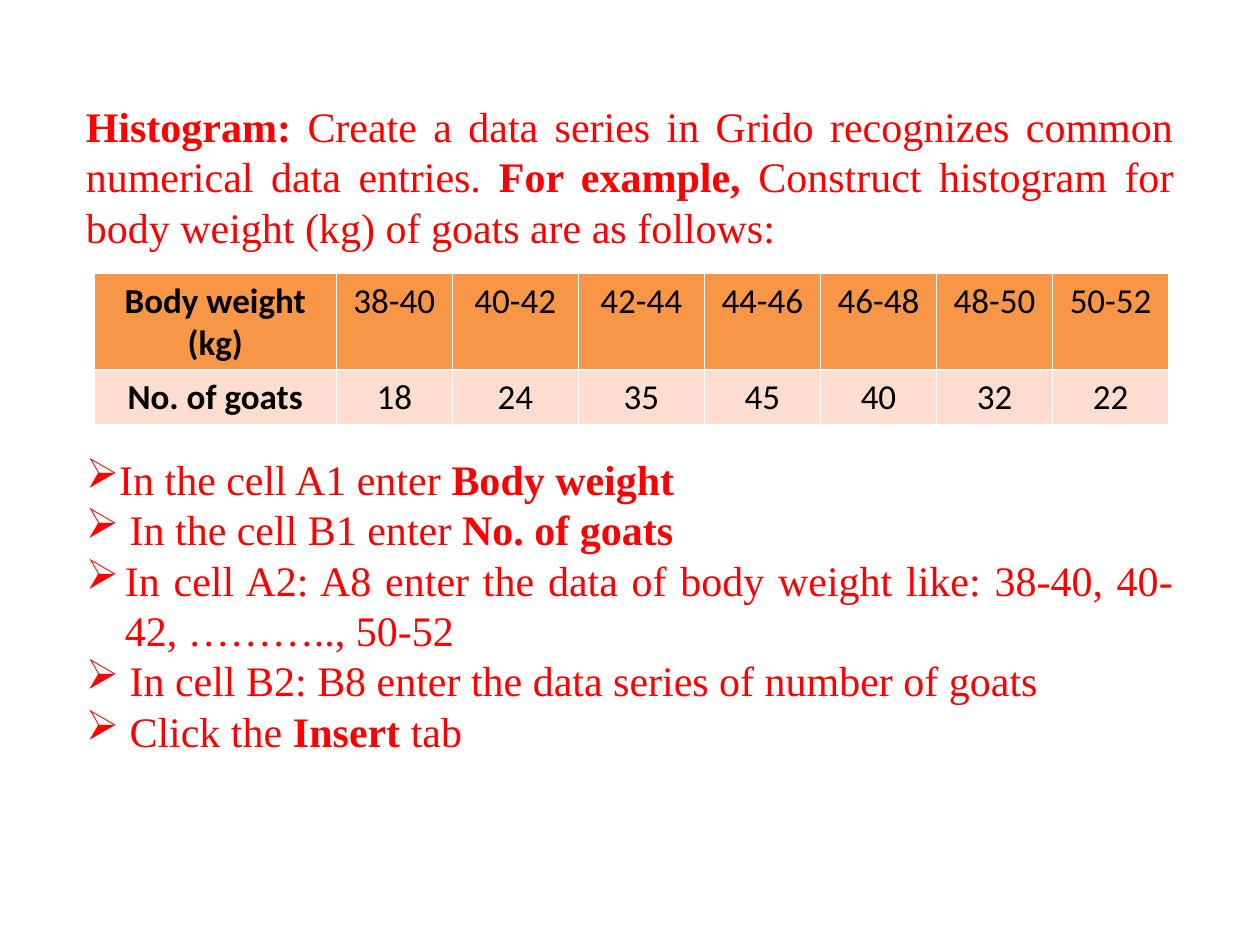
from pptx import Presentation
from pptx.dml.color import RGBColor
from pptx.enum.text import PP_ALIGN
from pptx.util import Cm, Pt
from lxml.etree import SubElement
from pptx.oxml.ns import qn

# Content: each paragraph is a list of (text, bold) runs
INTRO = [
    ("Histogram: ", True),
    ("Create a data series in Grido recognizes common numerical data entries. ", False),
    ("For example,", True),
    (" Construct histogram for body weight (kg) of goats are as follows:", False),
]
STEPS = [
    [("In the cell A1 enter ", False), ("Body weight", True)],
    [(" In the cell B1 enter ", False), ("No. of goats", True)],
    [("In cell A2: A8 enter the data of body weight like: 38-40, 40-42, ……….., 50-52", False)],
    [(" In cell B2: B8 enter the data series of number of goats", False)],
    [(" Click the ", False), ("Insert ", True), ("tab", False)],
]
HANGING = 2  # the step that wraps
ROWS = [
    ["Body weight (kg)", "38-40", "40-42", "42-44", "44-46", "46-48", "48-50", "50-52"],
    ["No. of goats", "18", "24", "35", "45", "40", "32", "22"],
]
WIDTHS = [4.88, 2.34, 2.54, 2.54, 2.34, 2.34, 2.34, 2.34]
HEIGHTS = [1.95, 1.1]
COLORS = {"text": "FF0000", "cell": "000000", "head": "F79646", "body": "FCDDCF"}
LINE = 28.8  # line pitch in points
GAP = 4  # lines left free for the table


def write(para, runs, font="Times New Roman", size=24, color="text",
          align=PP_ALIGN.JUSTIFY, pitch=None, before=0, bullet=None, indent=0):
    para.alignment = align
    para.space_before = Pt(before)
    if pitch:
        para.line_spacing = Pt(pitch)
    for text, bold in runs:
        run = para.add_run()
        run.text = text
        run.font.name, run.font.size, run.font.bold = font, Pt(size), bold
        run.font.color.rgb = RGBColor.from_string(COLORS[color])
    if bullet:
        props = para._p.get_or_add_pPr()
        props.set("marL", str(Cm(indent)))
        props.set("indent", str(-Cm(indent)))
        SubElement(props, qn("a:buChar")).set("char", bullet)


deck = Presentation()
deck.slide_width, deck.slide_height = Cm(25.4), Cm(19.05)
slide = deck.slides.add_slide(deck.slide_layouts[6])

# Introduction and steps, with room for the table between them
frame = slide.shapes.add_textbox(Cm(1.48), Cm(1.9), Cm(22.43), Cm(13.59)).text_frame
frame.word_wrap = True
write(frame.paragraphs[0], INTRO, pitch=LINE)
for i, step in enumerate(STEPS):
    write(frame.add_paragraph(), step, pitch=LINE, bullet="➢",
          before=0 if i else GAP * LINE, indent=0.79 if i == HANGING else 0)

# Table of body weights
table = slide.shapes.add_table(len(ROWS), len(WIDTHS), Cm(1.9), Cm(5.51),
                               Cm(sum(WIDTHS)), Cm(sum(HEIGHTS))).table
for col, width in zip(table.columns, WIDTHS):
    col.width = Cm(width)
for r, (row, height) in enumerate(zip(ROWS, HEIGHTS)):
    table.rows[r].height = Cm(height)
    for c, text in enumerate(row):
        cell = table.cell(r, c)
        cell.fill.solid()
        cell.fill.fore_color.rgb = RGBColor.from_string(COLORS["body" if r else "head"])
        write(cell.text_frame.paragraphs[0], [(text, c == 0)], font="Calibri",
              size=20, color="cell", align=PP_ALIGN.CENTER)

deck.save("out.pptx")
